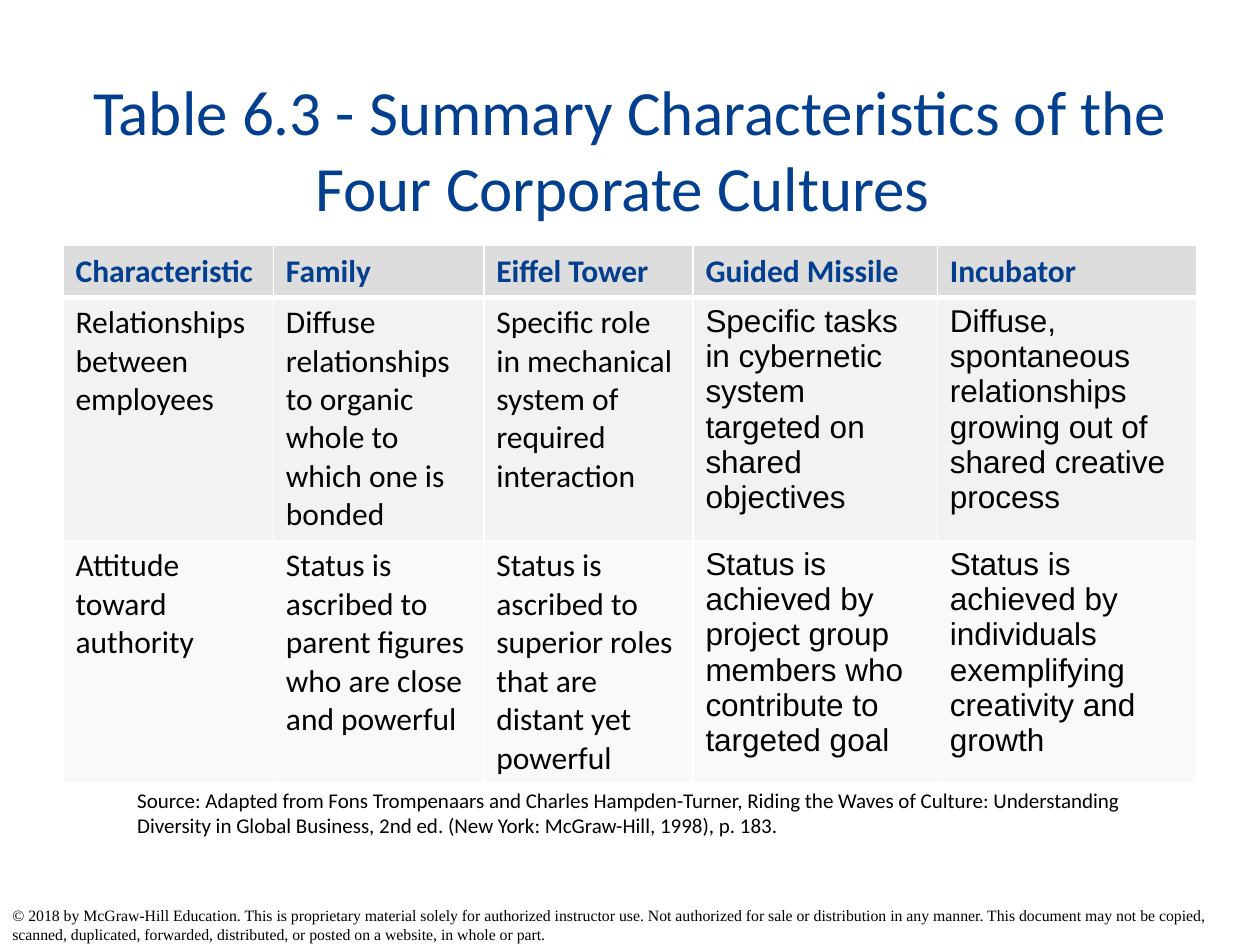
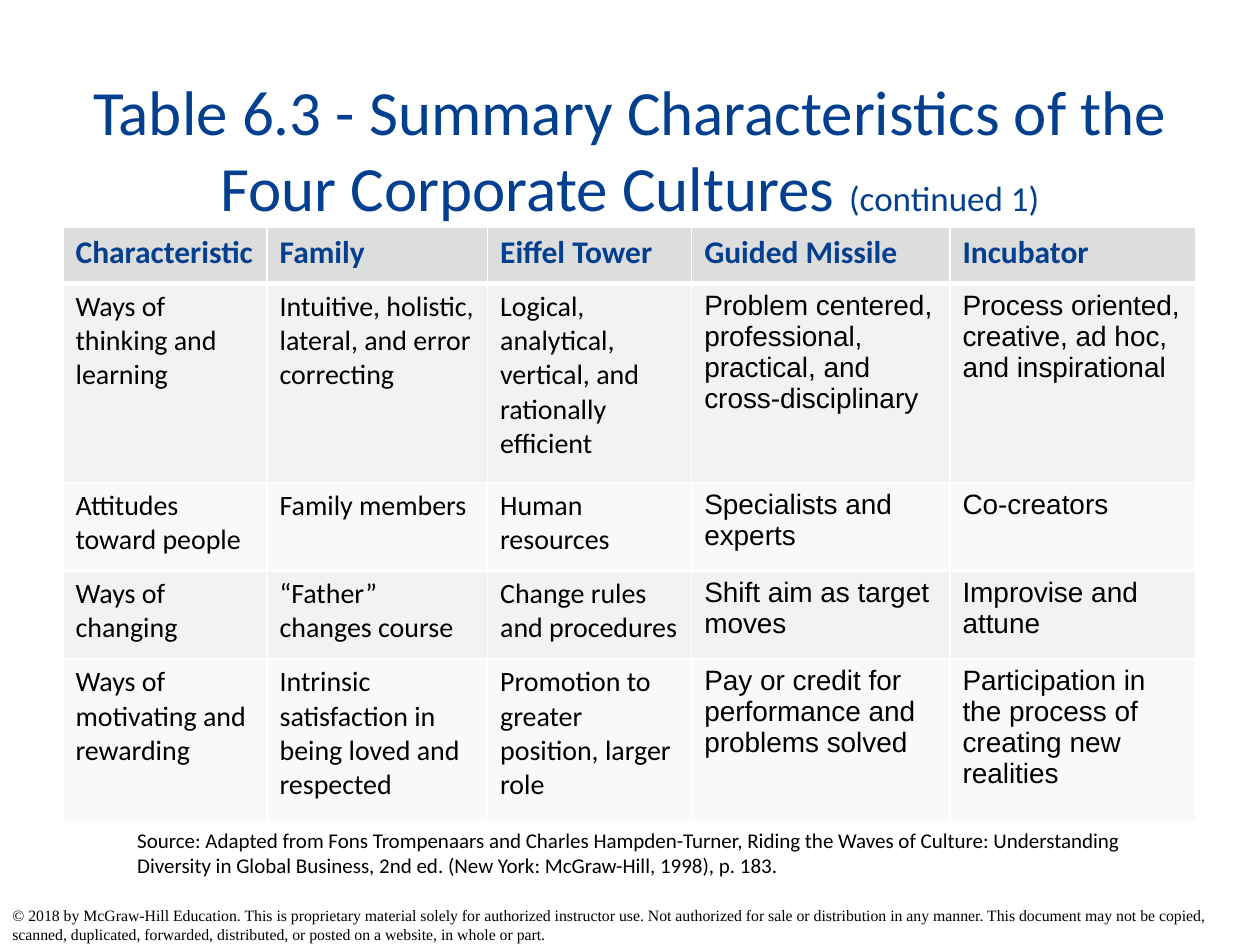
import pptx
import pptx.dml.color
import pptx.enum.text
import pptx.oxml
import pptx.oxml.ns
import pptx.util

Inches = pptx.util.Inches
Pt = pptx.util.Pt
RGBColor = pptx.dml.color.RGBColor

BLUE = RGBColor(0x03, 0x3F, 0x8F)
BLACK = RGBColor(0x00, 0x00, 0x00)
WHITE = RGBColor(0xFF, 0xFF, 0xFF)
HEADER_FILL = RGBColor(0xDD, 0xDD, 0xDD)
BAND_FILLS = (RGBColor(0xF2, 0xF2, 0xF2), RGBColor(0xF9, 0xF9, 0xF9))

BODY_FONT = "Calibri"
COLUMN_FONTS = (BODY_FONT, BODY_FONT, BODY_FONT, "Arial", "Arial")
HEADER_SIZE = 18

# Boxes: left, top, width, height in inches
TITLE_BOX = (0.5, 0.53, 9, 1.25)
FOOTER_BOX = (0, 7.14, 10, 0.19)
TABLE_LEFT = 0.5
SOURCE_LEFT, SOURCE_WIDTH, SOURCE_HEIGHT = 0.99, 8.02, 0.62

TITLE = "Table 6.3 - Summary Characteristics of the Four Corporate Cultures "
SOURCE = (
    "Source: Adapted from Fons Trompenaars and Charles Hampden-Turner, "
    "Riding the Waves of Culture: Understanding Diversity in Global Business, "
    "2nd ed. (New York: McGraw-Hill, 1998), p. 183."
)
FOOTER = (
    "© 2018 by McGraw-Hill Education. This is proprietary material solely for "
    "authorized instructor use. Not authorized for sale or distribution in any "
    "manner. This document may not be copied, scanned, duplicated, forwarded, "
    "distributed, or posted on a website, in whole or part."
)
HEADERS = ("Characteristic", "Family", "Eiffel Tower", "Guided Missile", "Incubator")

CULTURE_SLIDES = (
    {
        "suffix": "",
        "table_top": 1.95,
        "source_top": 6.2,
        "body_size": 18,
        "widths": (1.67, 1.67, 1.66, 1.94, 2.06),
        "heights": (0.41, 1.93, 1.92),
        "rows": (
            ("Relationships between employees",
             "Diffuse relationships to organic whole to which one is bonded",
             "Specific role in mechanical system of required interaction",
             "Specific tasks in cybernetic system targeted on shared objectives",
             "Diffuse, spontaneous relationships growing out of shared creative process"),
            ("Attitude toward authority",
             "Status is ascribed to parent figures who are close and powerful",
             "Status is ascribed to superior roles that are distant yet powerful",
             "Status is achieved by project group members who contribute to targeted goal",
             "Status is achieved by individuals exemplifying creativity and growth"),
        ),
    },
    {
        "suffix": "(continued 1)",
        "table_top": 1.8,
        "source_top": 6.52,
        "body_size": 16,
        "widths": (1.62, 1.75, 1.62, 2.05, 1.95),
        "heights": (0.45, 1.58, 0.7, 0.7, 1.29),
        "rows": (
            ("Ways of thinking and learning",
             "Intuitive, holistic, lateral, and error correcting",
             "Logical, analytical, vertical, and rationally efficient",
             "Problem centered, professional, practical, and cross-disciplinary",
             "Process oriented, creative, ad hoc, and inspirational"),
            ("Attitudes toward people", "Family members", "Human resources",
             "Specialists and experts", "Co-creators"),
            ("Ways of changing", "“Father” changes course",
             "Change rules and procedures", "Shift aim as target moves",
             "Improvise and attune"),
            ("Ways of motivating and rewarding",
             "Intrinsic satisfaction in being loved and respected",
             "Promotion to greater position, larger role",
             "Pay or credit for performance and problems solved",
             "Participation in the process of creating new realities"),
        ),
    },
)


def format_font(font, name, size, color, bold=False):
    font.name = name
    font.size = Pt(size)
    font.color.rgb = color
    font.bold = bold


def add_text(slide, box, text, font_name, size, color):
    """Add a wrapped, top-anchored text box and return its paragraph."""
    text_frame = slide.shapes.add_textbox(*map(Inches, box)).text_frame
    text_frame.word_wrap = True
    text_frame.vertical_anchor = pptx.enum.text.MSO_ANCHOR.TOP
    text_frame.text = text
    paragraph = text_frame.paragraphs[0]
    format_font(paragraph.runs[0].font, font_name, size, color)
    return paragraph


def add_title(slide, box, suffix):
    paragraph = add_text(slide, box, TITLE, BODY_FONT, 36, BLUE)
    paragraph.alignment = pptx.enum.text.PP_ALIGN.CENTER
    if suffix:
        run = paragraph.add_run()
        run.text = suffix
        format_font(run.font, BODY_FONT, 20, BLUE)


def set_borders(cell, top, bottom):
    """Draw white cell borders; widths in points."""
    properties = cell._tc.get_or_add_tcPr()
    for side, width in (("L", 1), ("R", 1), ("T", top), ("B", bottom)):
        properties.append(pptx.oxml.parse_xml(
            f'<a:ln{side} {pptx.oxml.ns.nsdecls("a")} w="{Pt(width)}">'
            f'<a:solidFill><a:srgbClr val="{WHITE}"/></a:solidFill></a:ln{side}>'
        ))


def add_culture_table(slide, left, top, content):
    rows = (HEADERS, *content["rows"])
    widths, heights = content["widths"], content["heights"]
    table = slide.shapes.add_table(
        len(rows), len(HEADERS), Inches(left), Inches(top),
        Inches(sum(widths)), Inches(sum(heights)),
    ).table
    table.horz_banding = False
    for column, width in zip(table.columns, widths):
        column.width = Inches(width)

    for row_index, texts in enumerate(rows):
        table.rows[row_index].height = Inches(heights[row_index])
        is_header = row_index == 0
        for column_index, text in enumerate(texts):
            cell = table.cell(row_index, column_index)
            # A thick rule parts the header from the body
            set_borders(cell, top=3 if row_index == 1 else 1, bottom=3 if is_header else 1)
            cell.fill.solid()
            cell.fill.fore_color.rgb = (
                HEADER_FILL if is_header else BAND_FILLS[(row_index - 1) % 2]
            )
            cell.text_frame.text = text
            font = cell.text_frame.paragraphs[0].runs[0].font
            if is_header:
                format_font(font, BODY_FONT, HEADER_SIZE, BLUE, bold=True)
            else:
                format_font(font, COLUMN_FONTS[column_index], content["body_size"], BLACK)


def add_culture_slide(presentation, content):
    slide = presentation.slides.add_slide(presentation.slide_layouts[6])
    add_text(slide, FOOTER_BOX, FOOTER, "Times New Roman", 9, BLACK)
    add_title(slide, TITLE_BOX, content["suffix"])
    add_culture_table(slide, TABLE_LEFT, content["table_top"], content)
    source_box = (SOURCE_LEFT, content["source_top"], SOURCE_WIDTH, SOURCE_HEIGHT)
    add_text(slide, source_box, SOURCE, BODY_FONT, 12, BLACK)


def main():
    presentation = pptx.Presentation()
    presentation.slide_width = Inches(10)
    presentation.slide_height = Inches(7.5)
    for content in CULTURE_SLIDES:
        add_culture_slide(presentation, content)
    presentation.save("out.pptx")


if __name__ == "__main__":
    main()
